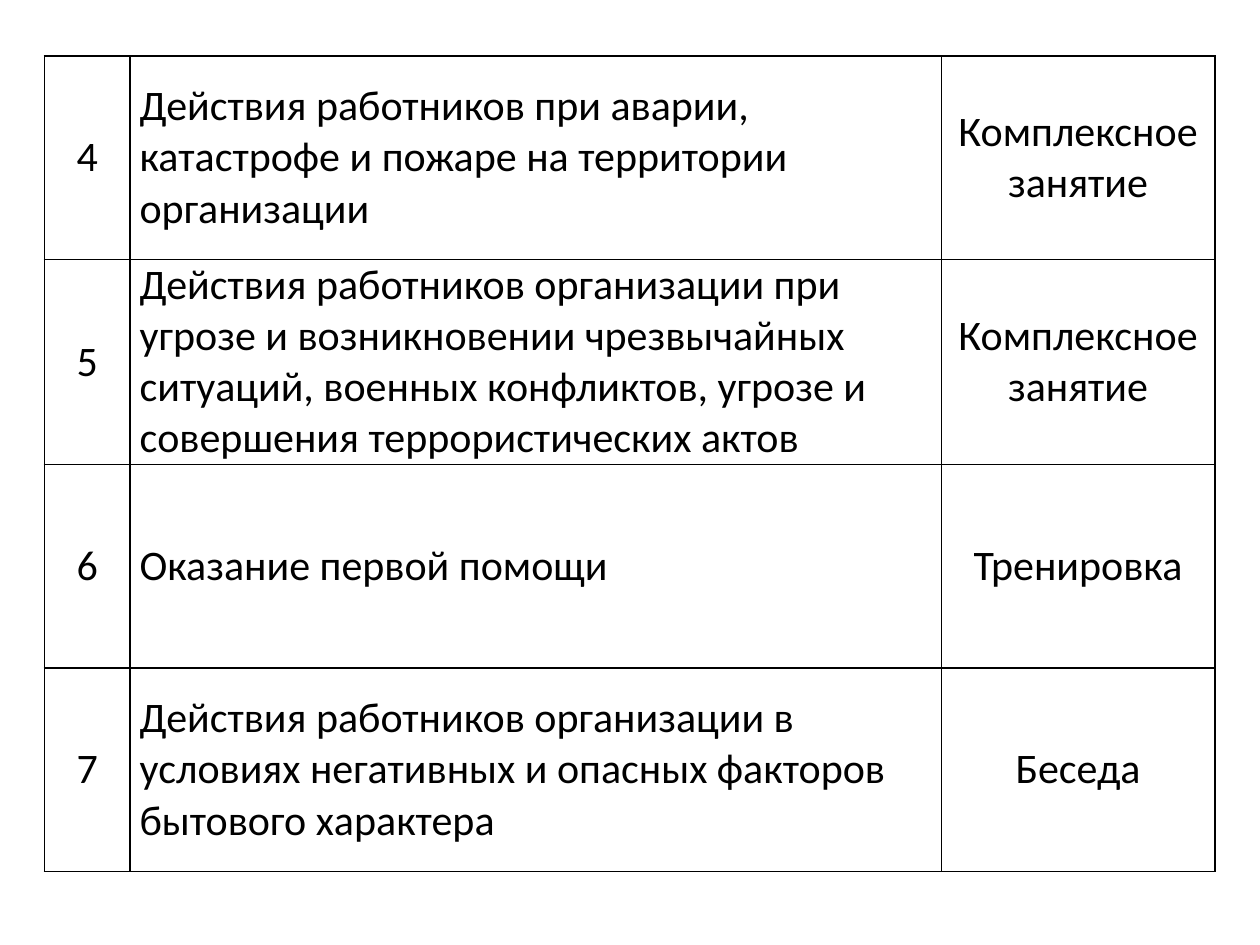
from lxml import etree
from pptx import Presentation
from pptx.dml.color import RGBColor
from pptx.enum.text import MSO_ANCHOR, PP_ALIGN
from pptx.oxml.ns import qn
from pptx.util import Pt

MIDDLE = MSO_ANCHOR.MIDDLE
LEFT = PP_ALIGN.LEFT
CENTER = PP_ALIGN.CENTER

COLUMN_WIDTHS = [49, 463.6, 156.2]
ROW_HEIGHT = 116.3
ALIGNMENTS = [CENTER, LEFT, CENTER]
TOPICS = [
    ("4", "Действия работников при аварии, катастрофе и пожаре на территории организации",
     "Комплексное\nзанятие"),
    ("5", "Действия работников организации при угрозе и возникновении чрезвычайных ситуаций, "
     "военных конфликтов, угрозе и совершения террористических актов",
     "Комплексное\nзанятие"),
    ("6", "Оказание первой помощи", "Тренировка"),
    ("7", "Действия работников организации в условиях негативных и опасных факторов "
     "бытового характера", "Беседа"),
]
SPACED_ROWS = 2


def color(value):
    return RGBColor.from_string(value)


class SlideBuilder:
    font_name = "Calibri"
    font_size = 24
    ink = "000000"
    paper = "FFFFFF"
    border_width = 1
    inset = 5.4

    def __init__(self, slide):
        self.slide = slide

    def table(self, left, top, widths, row_height, rows):
        shape = self.slide.shapes.add_table(
            len(rows), len(widths), Pt(left), Pt(top),
            Pt(sum(widths)), Pt(row_height * len(rows)))
        table = shape.table
        table.first_row = False
        table.horz_banding = False
        for column, width in zip(table.columns, widths):
            column.width = Pt(width)
        for row in table.rows:
            row.height = Pt(row_height)
        for row_index, texts in enumerate(rows):
            spaced = row_index < SPACED_ROWS
            for column_index, text in enumerate(texts):
                alignment = ALIGNMENTS[column_index]
                spacing = 12 if spaced and alignment == LEFT else 0
                self.cell(table.cell(row_index, column_index), text, alignment,
                          spacing, 0 if spaced else self.inset)

    def cell(self, cell, text, alignment, spacing, vertical_inset):
        cell.text = text
        cell.vertical_anchor = MIDDLE
        cell.margin_left = cell.margin_right = Pt(self.inset)
        cell.margin_top = cell.margin_bottom = Pt(vertical_inset)
        for paragraph in cell.text_frame.paragraphs:
            paragraph.alignment = alignment
            paragraph.space_before = paragraph.space_after = Pt(spacing)
            paragraph.font.name = self.font_name
            paragraph.font.size = Pt(self.font_size)
            paragraph.font.color.rgb = color(self.ink)
        self.borders(cell)
        cell.fill.solid()
        cell.fill.fore_color.rgb = color(self.paper)

    def borders(self, cell):
        properties = cell._tc.get_or_add_tcPr()
        for side in ("a:lnL", "a:lnR", "a:lnT", "a:lnB"):
            line = etree.SubElement(properties, qn(side), w=str(Pt(self.border_width)))
            fill = etree.SubElement(line, qn("a:solidFill"))
            etree.SubElement(fill, qn("a:srgbClr"), val=self.ink)


def main():
    presentation = Presentation()
    presentation.slide_width = Pt(720)
    presentation.slide_height = Pt(540)
    slide = presentation.slides.add_slide(presentation.slide_layouts[6])
    builder = SlideBuilder(slide)
    builder.table(25.4, 31.9, COLUMN_WIDTHS, ROW_HEIGHT, TOPICS)
    presentation.save("out.pptx")


if __name__ == "__main__":
    main()
